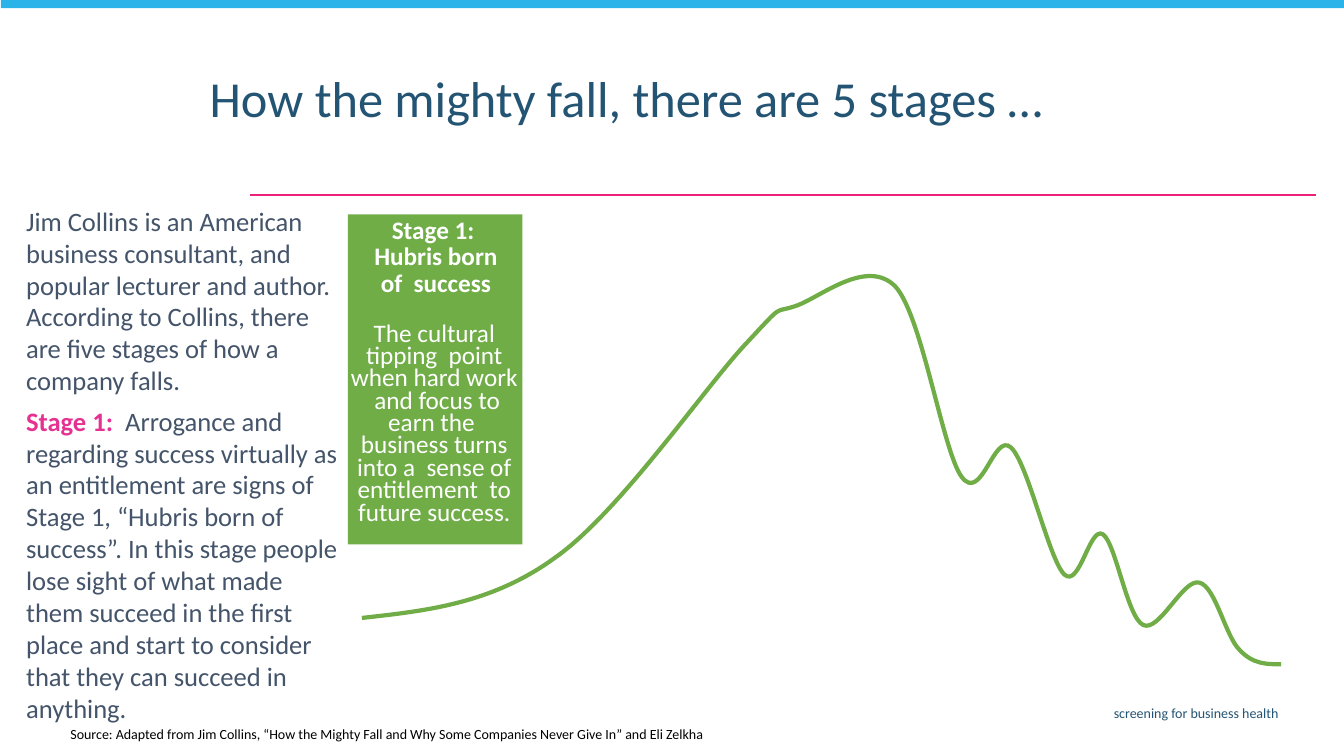
from lxml import etree
from pptx import Presentation
from pptx.dml.color import RGBColor
from pptx.enum.shapes import MSO_CONNECTOR, MSO_SHAPE
from pptx.enum.text import MSO_ANCHOR, PP_ALIGN
from pptx.oxml.ns import qn
from pptx.util import Pt

STRAIGHT = MSO_CONNECTOR.STRAIGHT
RECT = MSO_SHAPE.RECTANGLE
TOP, BOTTOM = MSO_ANCHOR.TOP, MSO_ANCHOR.BOTTOM
LEFT, CENTER, RIGHT = PP_ALIGN.LEFT, PP_ALIGN.CENTER, PP_ALIGN.RIGHT

FONT = "Calibri"
COLORS = {
    "bar": "29B3E8", "rule": "EC2179", "title": "245473", "body": "44546A",
    "accent": "E53292", "green": "70AD47", "white": "FFFFFF", "source": "000000",
}

CURVE_START = (258.5, 441.4)
CURVE_SEGMENTS = [
    ((304.6, 436.3), (351.4, 431.3), (396.7, 398.2)),
    ((442.8, 365.8), (504.7, 275), (533.5, 244.8)),
    ((561.6, 214.6), (551.5, 224.6), (569.5, 218.2)),
    ((586.8, 211.7), (619.2, 184.3), (639.4, 204.5)),
    ((658.8, 225.4), (673.2, 321.8), (686.9, 340.6)),
    ((701.3, 360), (709.9, 308.2), (722.2, 319.7)),
    ((734.4, 331.2), (749.5, 400.3), (760.3, 410.4)),
    ((771.1, 420.5), (778.3, 375.8), (787.7, 381.6)),
    ((797, 387.4), (805, 440.6), (816.5, 446.4)),
    ((828, 452.2), (845.3, 412.6), (856.8, 416.2)),
    ((868.3, 419), (875.5, 455), (885.6, 464.4)),
    ((895, 474.5), (905, 474.5), (915.1, 474.5)),
]


def rgb(name):
    """Return the named colour."""
    return RGBColor.from_string(COLORS[name])


def set_frame(tf, insets, anchor=TOP):
    """Set wrapping, insets and anchor of a text frame."""
    tf.word_wrap = True
    tf.vertical_anchor = anchor
    tf.margin_left, tf.margin_top, tf.margin_right, tf.margin_bottom = map(Pt, insets)


def add_run(p, text, size, color, bold=False):
    """Add a formatted run to a paragraph."""
    r = p.add_run()
    r.text = text
    r.font.name = FONT
    r.font.size = Pt(size)
    r.font.bold = bold
    r.font.color.rgb = rgb(color)


def add_text(slide, box, text, size, color, align=LEFT, anchor=TOP, spacing=1.0):
    """Add a text box with one line of text."""
    sp = slide.shapes.add_textbox(*map(Pt, box))
    set_frame(sp.text_frame, (7.2, 3.6, 7.2, 3.6), anchor)
    p = sp.text_frame.paragraphs[0]
    p.alignment = align
    p.line_spacing = spacing
    add_run(p, text, size, color)


def add_rect(slide, box, color):
    """Add a plain filled rectangle."""
    sp = slide.shapes.add_shape(RECT, *map(Pt, box))
    sp.shadow.inherit = False
    sp.fill.solid()
    sp.fill.fore_color.rgb = rgb(color)
    sp.line.fill.background()
    return sp


def add_rule(slide, x1, x2, y, color, width):
    """Add a horizontal line."""
    line = slide.shapes.add_connector(STRAIGHT, Pt(x1), Pt(y), Pt(x2), Pt(y))
    line.line.color.rgb = rgb(color)
    line.line.width = Pt(width)
    etree.SubElement(line._element.spPr, qn("a:effectLst"))


def add_curve(slide, start, segments, color, width):
    """Add an open outline of cubic Bezier segments."""
    points = [(Pt(x), Pt(y)) for segment in segments for x, y in segment]
    builder = slide.shapes.build_freeform(Pt(start[0]), Pt(start[1]))
    builder.add_line_segments(points, close=False)
    sp = builder.convert_to_shape()
    sp.shadow.inherit = False
    sp.fill.background()
    sp.line.color.rgb = rgb(color)
    sp.line.width = Pt(width)
    outline = sp._element.spPr.find(".//" + qn("a:path"))
    steps = outline.findall(qn("a:lnTo"))
    for i in range(0, len(steps), 3):
        bezier = etree.SubElement(outline, qn("a:cubicBezTo"))
        for step in steps[i:i + 3]:
            bezier.append(step[0])
            outline.remove(step)


def add_body(slide):
    """Add the explanation in the left column."""
    sp = slide.shapes.add_textbox(Pt(12.2), Pt(143.3), Pt(236.2), Pt(380.9))
    tf = sp.text_frame
    set_frame(tf, (6.5, 2.9, 6.5, 2.9))
    add_run(tf.paragraphs[0], "Jim Collins is an American business consultant, and popular "
            "lecturer and author. According to Collins, there are five stages of how a "
            "company falls.", 19, "body")
    p = tf.add_paragraph()
    p.space_before = Pt(6)
    add_run(p, "Stage 1:  ", 19, "accent", True)
    add_run(p, "Arrogance and regarding success virtually as an entitlement are signs of "
            "Stage 1, “Hubris born of success”. In this stage people lose sight of what "
            "made them succeed in the first place and start to consider that they can "
            "succeed in anything.", 19, "body")


def add_stage(slide):
    """Add the green card for stage 1."""
    tf = add_rect(slide, (248.6, 153.2, 124.6, 235.6), "green").text_frame
    set_frame(tf, (0, 2.2, 0, 0))
    paragraphs = [
        ("Stage 1:  Hubris born of  success", True, 17, 16, 19, 0),
        ("The cultural tipping  point when hard work  and focus to earn the  business "
         "turns into a  sense of entitlement  to future success.", False, 0.7, 2, 16, 19.5),
    ]
    for i, (text, bold, left, right, leading, before) in enumerate(paragraphs):
        p = tf.add_paragraph() if i else tf.paragraphs[0]
        p.alignment = CENTER
        p.line_spacing = Pt(leading)
        if before:
            p.space_before = Pt(before)
        pPr = p._p.get_or_add_pPr()
        pPr.set("marL", str(Pt(left)))
        pPr.set("marR", str(Pt(right)))
        pPr.set("indent", "0")
        add_run(p, text, 18, "white", bold)


def main():
    """Build the slide and save it."""
    prs = Presentation()
    prs.slide_width, prs.slide_height = Pt(960), Pt(540)
    slide = prs.slides.add_slide(prs.slide_layouts[6])
    add_rule(slide, 940.3, 178.6, 139, "rule", 1.5)
    add_rect(slide, (0.7, -1.4, 960, 7.2), "bar")
    add_text(slide, (262.8, 499.7, 657.4, 20.9), "screening for business health",
             10, "title", align=RIGHT)
    add_text(slide, (142.6, 49, 697, 54.7), "How the mighty fall, there are 5 stages …",
             36, "title", spacing=0.9)
    add_body(slide)
    add_stage(slide)
    add_curve(slide, CURVE_START, CURVE_SEGMENTS, "green", 3)
    add_text(slide, (43.2, 514.1, 509.8, 19.4), "Source: Adapted from Jim Collins, “How the "
             "Mighty Fall and Why Some Companies Never Give In” and Eli Zelkha",
             10, "source", anchor=BOTTOM)
    prs.save("out.pptx")


if __name__ == "__main__":
    main()
